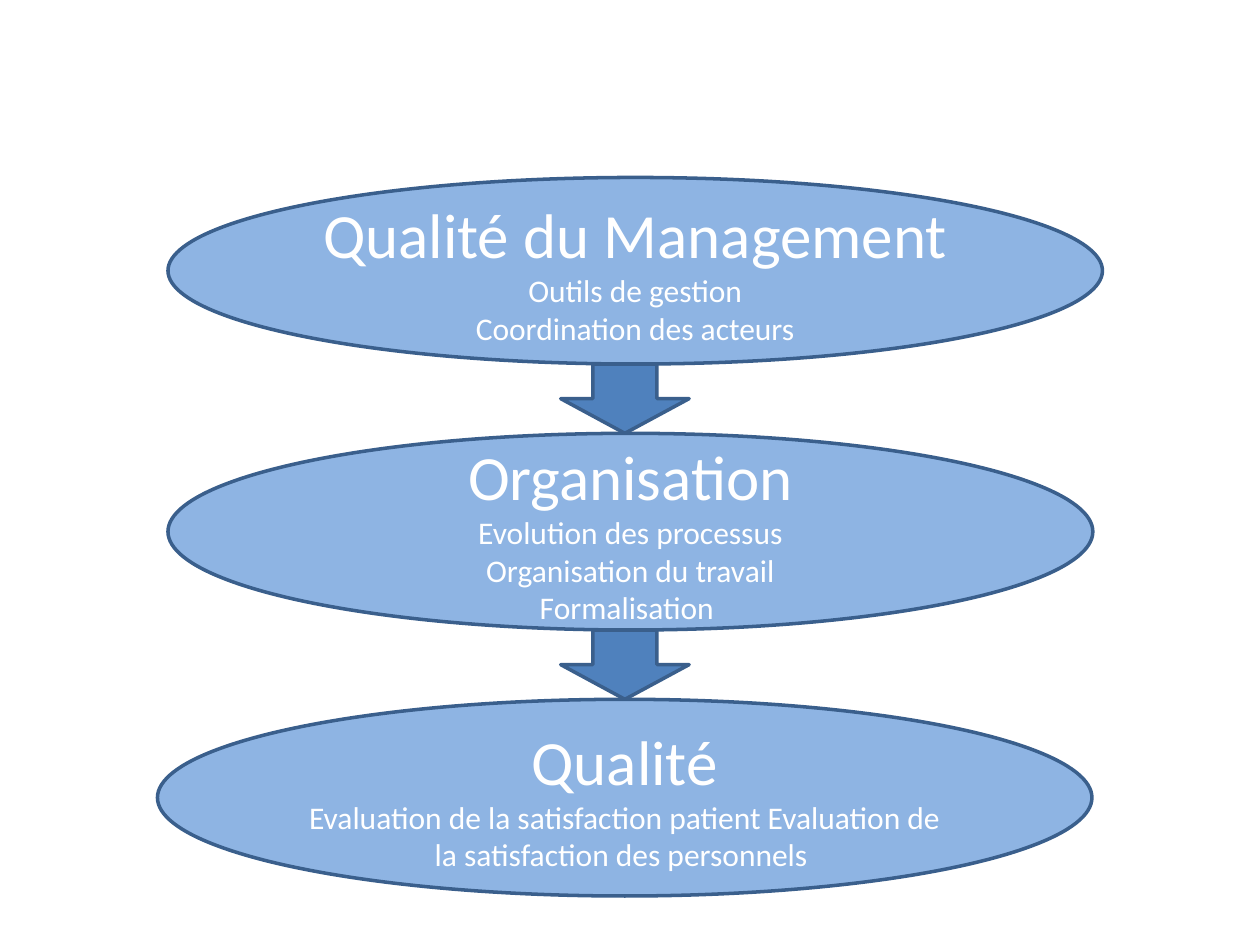
from pptx import Presentation
from pptx.dml.color import RGBColor
from pptx.enum.shapes import MSO_SHAPE
from pptx.enum.text import MSO_ANCHOR, PP_ALIGN
from pptx.util import Pt

# Content: heading, details, then left, width and height of each stage
STAGES = [
    ("Qualité du Management",
     ["Outils de gestion", "Coordination des acteurs"],
     (96, 534, 106.6)),
    ("Organisation",
     ["Evolution des processus", "Organisation du travail", "Formalisation "],
     (96, 528.5, 112.4)),
    ("Qualité",
     ["Evaluation de la satisfaction patient Evaluation de la satisfaction des personnels "],
     (90, 534, 112.4)),
]

THEME = {
    "stage": RGBColor(0x8E, 0xB4, 0xE3),
    "arrow": RGBColor(0x4F, 0x81, 0xBD),
    "outline": RGBColor(0x3A, 0x5F, 0x8C),
    "text": RGBColor(0xFF, 0xFF, 0xFF),
    "font": "Calibri",
    "heading_size": Pt(36),
    "detail_size": Pt(18),
    "outline_width": Pt(2),
}

FIRST_TOP = 101.4
ARROW_LEFT, ARROW_WIDTH, ARROW_HEIGHT = 320.4, 73.4, 39.6


def add_outlined(slide, preset, box, fill):
    shape = slide.shapes.add_shape(preset, *map(Pt, box))
    shape.shadow.inherit = False
    shape.fill.solid()
    shape.fill.fore_color.rgb = fill
    shape.line.color.rgb = THEME["outline"]
    shape.line.width = THEME["outline_width"]
    return shape


def write_stage(frame, heading, details):
    frame.word_wrap = True
    frame.vertical_anchor = MSO_ANCHOR.MIDDLE
    for index, line in enumerate([heading, *details]):
        paragraph = frame.add_paragraph() if index else frame.paragraphs[0]
        paragraph.alignment = PP_ALIGN.CENTER
        run = paragraph.add_run()
        run.text = line
        size = THEME["detail_size"] if index else THEME["heading_size"]
        for name, value in {"name": THEME["font"], "size": size}.items():
            setattr(run.font, name, value)
        run.font.color.rgb = THEME["text"]


def main():
    deck = Presentation()
    deck.slide_width, deck.slide_height = Pt(720), Pt(540)
    slide = deck.slides.add_slide(deck.slide_layouts[6])

    # Stages stacked downwards, with an arrow filling each gap
    top = FIRST_TOP
    for index, (heading, details, (left, width, height)) in enumerate(STAGES):
        if index:
            add_outlined(slide, MSO_SHAPE.DOWN_ARROW,
                         (ARROW_LEFT, top, ARROW_WIDTH, ARROW_HEIGHT), THEME["arrow"])
            top += ARROW_HEIGHT
        stage = add_outlined(slide, MSO_SHAPE.OVAL,
                             (left, top, width, height), THEME["stage"])
        write_stage(stage.text_frame, heading, details)
        top += height

    deck.save("out.pptx")


if __name__ == "__main__":
    main()
